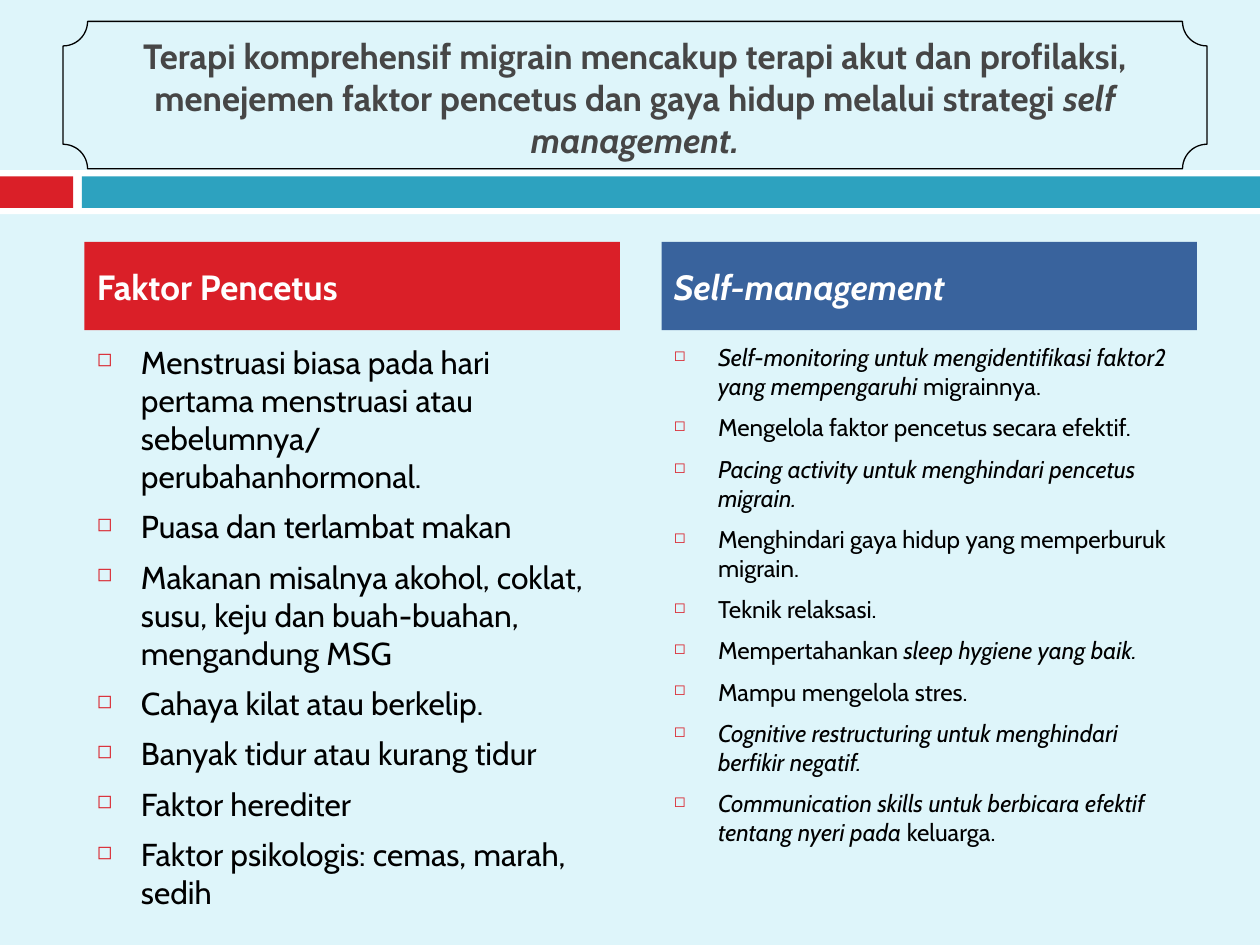
from dataclasses import dataclass
from typing import NamedTuple

from lxml.etree import SubElement
from pptx import Presentation
from pptx.dml.color import RGBColor
from pptx.enum.shapes import MSO_SHAPE as Preset
from pptx.enum.text import MSO_ANCHOR as Anchor, PP_ALIGN as Align
from pptx.oxml.ns import qn
from pptx.util import Inches, Pt


@dataclass(frozen=True)
class Theme:
    font: str = "Cabin"
    background: str = "DEF5FA"
    white: str = "FFFFFF"
    black: str = "000000"
    red: str = "DA1F28"
    teal: str = "2DA2BF"
    blue: str = "39639D"
    title: str = "464646"
    heading_size: float = 20
    triggers_size: float = 18.1
    self_management_size: float = 13.8
    paragraph_gap: float = 7


class Box(NamedTuple):
    left: float
    top: float
    width: float
    height: float

    def lengths(self) -> list:
        return [Inches(value) for value in self]


class Words(NamedTuple):
    text: str
    italic: bool = False


class Column(NamedTuple):
    left: float
    color: str
    heading: Words
    size: float
    items: list[list[Words]]


THEME = Theme()
COLUMN_WIDTH = 4.25

TITLE = [
    Words("Terapi komprehensif migrain mencakup terapi akut dan profilaksi, "
          "menejemen faktor pencetus dan gaya hidup melalui strategi "),
    Words("self management.", True),
]

TRIGGERS = [
    [Words("Menstruasi biasa pada hari pertama menstruasi atau sebelumnya/ perubahanhormonal.")],
    [Words("Puasa dan terlambat makan")],
    [Words("Makanan misalnya akohol, coklat, susu, keju dan buah-buahan, mengandung MSG")],
    [Words("Cahaya kilat atau berkelip.")],
    [Words("Banyak tidur atau kurang tidur")],
    [Words("Faktor herediter")],
    [Words("Faktor psikologis: cemas, marah, sedih")],
]

SELF_MANAGEMENT = [
    [Words("Self-monitoring untuk mengidentifikasi faktor2 yang mempengaruhi ", True),
     Words("migrainnya.")],
    [Words("Mengelola faktor pencetus secara efektif.")],
    [Words("Pacing activity untuk menghindari pencetus migrain.", True)],
    [Words("Menghindari gaya hidup yang memperburuk migrain.")],
    [Words("Teknik relaksasi.")],
    [Words("Mempertahankan "), Words("sleep hygiene yang baik.", True)],
    [Words("Mampu mengelola stres.")],
    [Words("Cognitive restructuring untuk menghindari berfikir negatif.", True)],
    [Words("Communication skills untuk berbicara efektif tentang nyeri pada ", True),
     Words("keluarga.")],
]

COLUMNS = [
    Column(0.67, THEME.red, Words("Faktor Pencetus"), THEME.triggers_size, TRIGGERS),
    Column(5.25, THEME.blue, Words("Self-management", True),
           THEME.self_management_size, SELF_MANAGEMENT),
]

BANDS = [
    (Box(0, 1.35, 10, 0.35), THEME.white),
    (Box(0, 1.4, 0.58, 0.25), THEME.red),
    (Box(0.65, 1.4, 9.35, 0.25), THEME.teal),
]


def rgb(color: str) -> RGBColor:
    return RGBColor.from_string(color)


def add_bar(slide, box: Box, color: str):
    bar = slide.shapes.add_shape(Preset.RECTANGLE, *box.lengths())
    bar.shadow.inherit = False
    bar.fill.solid()
    bar.fill.fore_color.rgb = rgb(color)
    bar.line.fill.background()
    return bar


def add_text_frame(slide, box: Box, anchor: Anchor):
    frame = slide.shapes.add_textbox(*box.lengths()).text_frame
    frame.word_wrap = True
    frame.vertical_anchor = anchor
    return frame


def add_runs(paragraph, runs: list[Words], size: float, color: str, bold: bool = False) -> None:
    for words in runs:
        run = paragraph.add_run()
        run.text = words.text
        run.font.name = THEME.font
        run.font.size = Pt(size)
        run.font.bold = bold
        run.font.italic = words.italic
        run.font.color.rgb = rgb(color)


def add_bullet(paragraph) -> None:
    """Give the paragraph a small red hollow square and a hanging indent."""
    properties = paragraph._p.get_or_add_pPr()
    properties.set("marL", str(Inches(0.35)))
    properties.set("indent", str(-Inches(0.35)))
    bullet_color = SubElement(properties, qn("a:buClr"))
    SubElement(bullet_color, qn("a:srgbClr"), val=THEME.red)
    SubElement(properties, qn("a:buSzPct"), val="60000")
    SubElement(properties, qn("a:buChar"), char="◻")


def add_title(slide) -> None:
    frame = add_text_frame(slide, Box(0.58, 0.3, 8.92, 0.95), Anchor.MIDDLE)
    paragraph = frame.paragraphs[0]
    paragraph.alignment = Align.CENTER
    add_runs(paragraph, TITLE, THEME.heading_size, THEME.title, bold=True)


def add_title_plaque(slide) -> None:
    plaque = slide.shapes.add_shape(Preset.PLAQUE, *Box(0.5, 0.17, 9.08, 1.17).lengths())
    plaque.shadow.inherit = False
    plaque.fill.background()
    plaque.line.color.rgb = rgb(THEME.black)
    plaque.line.width = Pt(0.75)


def add_column(slide, column: Column) -> None:
    header = add_bar(slide, Box(column.left, 1.92, COLUMN_WIDTH, 0.7), column.color).text_frame
    header.word_wrap = True
    header.vertical_anchor = Anchor.MIDDLE
    heading = header.paragraphs[0]
    heading.alignment = Align.LEFT
    heading.space_before = Pt(THEME.paragraph_gap)
    add_runs(heading, [column.heading], THEME.heading_size, THEME.white, bold=True)

    body = add_text_frame(slide, Box(column.left, 2.67, COLUMN_WIDTH, 3.92), Anchor.TOP)
    for index, item in enumerate(column.items):
        paragraph = body.add_paragraph() if index else body.paragraphs[0]
        paragraph.space_before = Pt(THEME.paragraph_gap)
        add_bullet(paragraph)
        add_runs(paragraph, item, column.size, THEME.black)


def main() -> None:
    deck = Presentation()
    deck.slide_width, deck.slide_height = Inches(10), Inches(7.5)
    slide = deck.slides.add_slide(deck.slide_layouts[6])
    slide.background.fill.solid()
    slide.background.fill.fore_color.rgb = rgb(THEME.background)

    for box, color in BANDS:
        add_bar(slide, box, color)
    add_title(slide)
    for column in COLUMNS:
        add_column(slide, column)
    add_title_plaque(slide)
    deck.save("out.pptx")


if __name__ == "__main__":
    main()
